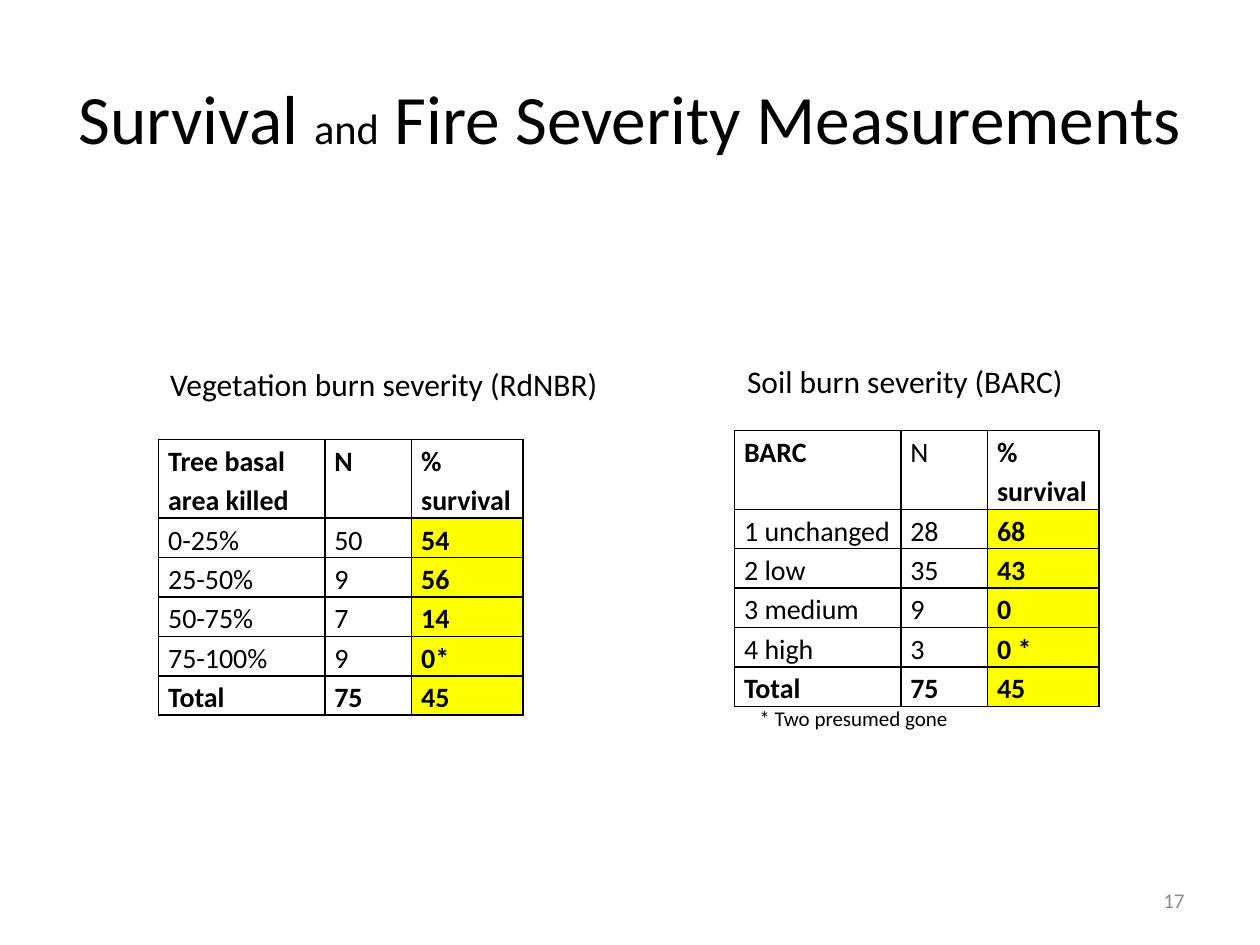
import dataclasses

import lxml.etree
import pptx
import pptx.dml.color
import pptx.enum.text
import pptx.oxml.ns
import pptx.presentation
import pptx.shapes.autoshape
import pptx.slide
import pptx.table
import pptx.text.text
import pptx.util
from pptx.util import Cm

COLORS = {"ink": "000000", "highlight": "FFFF00", "page_number": "8C8C8C"}
FONT = "Calibri"
COLUMN_WIDTHS = (3.35, 1.75, 2.24)
ROW_HEIGHT = 0.79
SURVIVAL_COLUMN = 2


@dataclasses.dataclass(frozen=True)
class SeverityTable:
    left: float
    top: float
    rows: tuple[tuple[str, str, str], ...]
    header_bold: tuple[bool, bool, bool]


@dataclasses.dataclass(frozen=True)
class Label:
    text: str
    left: float
    top: float
    width: float
    height: float
    size: float


VEGETATION = SeverityTable(
    3.2, 8.86,
    (
        ("Tree basal area killed", "N", "% survival"),
        ("0-25%", "50", "54"),
        ("25-50%", "9", "56"),
        ("50-75%", "7", "14"),
        ("75-100%", "9", "0*"),
        ("Total", "75", "45"),
    ),
    (True, True, True),
)
SOIL = SeverityTable(
    14.81, 8.68,
    (
        ("BARC", "N", "% survival"),
        ("1 unchanged", "28", "68"),
        ("2 low", "35", "43"),
        ("3 medium", "9", "0"),
        ("4 high", "3", "0 *"),
        ("Total", "75", "45"),
    ),
    (True, False, True),
)
LABELS = (
    Label("Vegetation burn severity (RdNBR)", 3.18, 7.24, 9.17, 1.03, 18),
    Label("Soil burn severity (BARC)", 14.81, 7.18, 6.96, 1.03, 18),
    Label("* Two presumed gone", 15.06, 14.1, 4.34, 0.77, 12),
)
PAGE_NUMBER = Label("17", 18.2, 17.65, 5.93, 1.01, 12)
TITLE_RUNS = (("Survival ", 39.6), ("and", 24.3), (" Fire Severity Measurements", 39.6))


def add_run(paragraph: pptx.text.text._Paragraph, text: str, size: float,
            color: str = "ink", bold: bool = False) -> None:
    run = paragraph.add_run()
    run.text = text
    run.font.name = FONT
    run.font.size = pptx.util.Pt(size)
    run.font.bold = bold
    run.font.color.rgb = pptx.dml.color.RGBColor.from_string(COLORS[color])


def draw_title(slide: pptx.slide.Slide) -> None:
    title = slide.shapes.title
    title.left, title.top = Cm(1.27), Cm(0.76)
    title.width, title.height = Cm(22.86), Cm(3.18)
    frame = title.text_frame
    frame.auto_size = pptx.enum.text.MSO_AUTO_SIZE.NONE
    frame.vertical_anchor = pptx.enum.text.MSO_ANCHOR.MIDDLE
    heading = frame.paragraphs[0]
    heading.alignment = pptx.enum.text.PP_ALIGN.CENTER
    for text, size in TITLE_RUNS:
        add_run(heading, text, size)


def draw_label(slide: pptx.slide.Slide, label: Label,
               color: str = "ink") -> pptx.shapes.autoshape.Shape:
    box = slide.shapes.add_textbox(
        Cm(label.left), Cm(label.top), Cm(label.width), Cm(label.height))
    box.text_frame.word_wrap = False
    box.text_frame.auto_size = pptx.enum.text.MSO_AUTO_SIZE.SHAPE_TO_FIT_TEXT
    add_run(box.text_frame.paragraphs[0], label.text, label.size, color)
    return box


def draw_page_number(slide: pptx.slide.Slide) -> None:
    frame = draw_label(slide, PAGE_NUMBER, "page_number").text_frame
    frame.auto_size = pptx.enum.text.MSO_AUTO_SIZE.NONE
    frame.word_wrap = True
    frame.vertical_anchor = pptx.enum.text.MSO_ANCHOR.MIDDLE
    frame.paragraphs[0].alignment = pptx.enum.text.PP_ALIGN.RIGHT


def add_borders(cell: pptx.table._Cell) -> None:
    qn = pptx.oxml.ns.qn
    properties = cell._tc.get_or_add_tcPr()
    for side in ("a:lnL", "a:lnR", "a:lnT", "a:lnB"):
        border = lxml.etree.SubElement(properties, qn(side), w=str(pptx.util.Pt(1)))
        fill = lxml.etree.SubElement(border, qn("a:solidFill"))
        lxml.etree.SubElement(fill, qn("a:srgbClr"), val=COLORS["ink"])


def draw_cell(cell: pptx.table._Cell, text: str, bold: bool, highlighted: bool) -> None:
    add_borders(cell)
    cell.margin_left = cell.margin_right = Cm(0.19)
    cell.margin_top = cell.margin_bottom = Cm(0)
    if highlighted:
        cell.fill.solid()
        cell.fill.fore_color.rgb = pptx.dml.color.RGBColor.from_string(COLORS["highlight"])
    else:
        cell.fill.background()
    paragraph = cell.text_frame.paragraphs[0]
    paragraph.line_spacing = 1.15
    add_run(paragraph, text, 16, bold=bold)


def draw_severity_table(slide: pptx.slide.Slide, severity: SeverityTable) -> None:
    row_count = len(severity.rows)
    table = slide.shapes.add_table(
        row_count, len(COLUMN_WIDTHS), Cm(severity.left), Cm(severity.top),
        Cm(sum(COLUMN_WIDTHS)), Cm(ROW_HEIGHT * (row_count + 1))).table
    table.first_row = table.horz_banding = False
    for column, width in zip(table.columns, COLUMN_WIDTHS):
        column.width = Cm(width)
    for r, values in enumerate(severity.rows):
        is_header, is_total = r == 0, r == row_count - 1
        table.rows[r].height = Cm(ROW_HEIGHT * (2 if is_header else 1))
        for c, value in enumerate(values):
            is_survival = c == SURVIVAL_COLUMN
            bold = severity.header_bold[c] if is_header else is_total or is_survival
            draw_cell(table.cell(r, c), value, bold, is_survival and not is_header)


def main() -> None:
    deck = pptx.Presentation()
    deck.slide_width, deck.slide_height = Cm(25.4), Cm(19.05)
    slide = deck.slides.add_slide(deck.slide_layouts.get_by_name("Title Only"))
    draw_title(slide)
    for severity in (VEGETATION, SOIL):
        draw_severity_table(slide, severity)
    for label in LABELS:
        draw_label(slide, label)
    draw_page_number(slide)
    deck.save("out.pptx")


if __name__ == "__main__":
    main()
